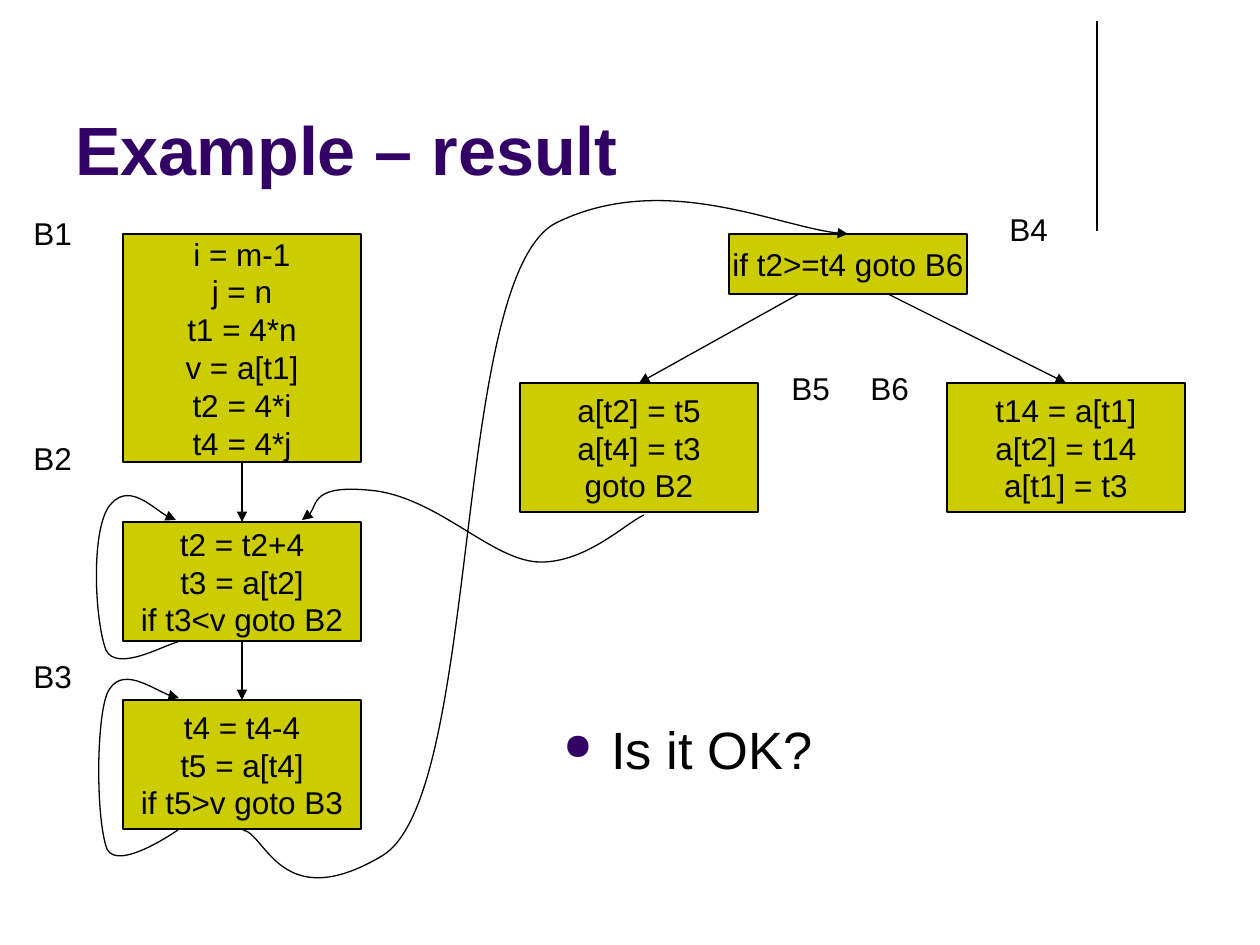
"""Builds the slide "Example – result", a flow graph of basic blocks."""
from lxml import etree
from pptx import Presentation
from pptx import util as u
from pptx.dml.color import RGBColor
from pptx.enum import shapes, text
from pptx.oxml.ns import qn

SCALE = 914400 / 126
COLORS = {"ink": "000000", "title": "330066", "block": "CCCC00"}
FONT = "Arial"
TOP, BOTTOM = 0, 2
BLOCK_WIDTH = 238

BLOCKS = {
    "B1": (123, 234, 228, ["i = m-1", "j = n", "t1 = 4*n", "v = a[t1]", "t2 = 4*i", "t4 = 4*j"]),
    "B2": (123, 522, 119, ["t2 = t2+4", "t3 = a[t2]", "if t3<v goto B2"]),
    "B3": (123, 700, 129, ["t4 = t4-4", "t5 = a[t4]", "if t5>v goto B3"]),
    "B4": (729, 234, 60, ["if t2>=t4 goto B6"]),
    "B5": (520, 383, 129, ["a[t2] = t5", "a[t4] = t3", "goto B2"]),
    "B6": (947, 383, 129, ["t14 = a[t1]", "a[t2] = t14", "a[t1] = t3"]),
}
LABELS = {"B1": (21, 208), "B4": (997, 204), "B5": (779, 363),
          "B6": (858, 363), "B2": (21, 433), "B3": (21, 651)}
BRANCHES = {"B5": (799, 294), "B6": (888, 294)}
B5_TO_B2 = [(644, 515), (626, 523), (587, 562), (541, 562), (494, 562),
            (442, 501), (377, 491), (311, 483), (318, 515), (302, 520)]
B2_LOOP = [(178, 642), (166, 644), (117, 673), (106, 650), (95, 620),
           (91, 536), (108, 508), (127, 480), (163, 518), (176, 520)]
B3_LOOP = [(178, 830), (178, 830), (118, 872), (107, 849), (96, 819),
           (96, 723), (107, 694), (120, 664), (164, 697), (179, 698)]
B3_TO_B4 = [(243, 830), (266, 834), (281, 916), (382, 856), (483, 796),
            (450, 272), (558, 222), (665, 171), (788, 232), (848, 234)]


def px(*values):
    return [u.Emu(round(value * SCALE)) for value in values]


def rgb(name):
    return RGBColor.from_string(COLORS[name])


class FlowSlide:
    def __init__(self, slide):
        self.shapes = slide.shapes

    def outline(self, shape, arrow=False):
        shape.line.color.rgb = rgb("ink")
        shape.line.width = u.Pt(0.75)
        if arrow:
            stroke = shape._element.spPr.find(qn("a:ln"))
            etree.SubElement(stroke, qn("a:tailEnd"), type="triangle")

    def set_lines(self, frame, lines, size=18, color="ink", bold=False, align=None):
        for index, line in enumerate(lines):
            para = frame.add_paragraph() if index else frame.paragraphs[0]
            para.text = line
            para.alignment = align
            para.font.name, para.font.size, para.font.bold = FONT, u.Pt(size), bold
            para.font.color.rgb = rgb(color)

    def block(self, left, top, height, lines):
        box = self.shapes.add_shape(shapes.MSO_SHAPE.RECTANGLE,
                                    *px(left, top, BLOCK_WIDTH, height))
        box.shadow.inherit = False
        box.fill.solid()
        box.fill.fore_color.rgb = rgb("block")
        self.outline(box)
        frame = box.text_frame
        frame.word_wrap = False
        frame.vertical_anchor = text.MSO_ANCHOR.MIDDLE
        self.set_lines(frame, lines, align=text.PP_ALIGN.CENTER)
        return box

    def label(self, left, top, words):
        frame = self.shapes.add_textbox(*px(left, top, 64, 50)).text_frame
        frame.word_wrap = False
        frame.auto_size = text.MSO_AUTO_SIZE.SHAPE_TO_FIT_TEXT
        self.set_lines(frame, [words])

    def title(self, words):
        frame = self.shapes.add_textbox(*px(63, 16, 1040, 179)).text_frame
        frame.word_wrap = True
        frame.vertical_anchor = text.MSO_ANCHOR.BOTTOM
        self.set_lines(frame, [words], 39, "title", True)

    def bullet(self, words):
        frame = self.shapes.add_textbox(*px(551, 711, 646, 99)).text_frame
        frame.word_wrap = True
        props = frame.paragraphs[0]._p.get_or_add_pPr()
        props.set("marL", str(u.Inches(0.38)))
        props.set("indent", str(u.Inches(-0.38)))
        color = etree.SubElement(props, qn("a:buClr"))
        etree.SubElement(color, qn("a:srgbClr"), val=COLORS["title"])
        etree.SubElement(props, qn("a:buSzPct"), val="70000")
        etree.SubElement(props, qn("a:buChar"), char="●")
        self.set_lines(frame, [words], 30)

    def line(self, start, end, arrow=True):
        connector = self.shapes.add_connector(shapes.MSO_CONNECTOR.STRAIGHT, *px(*start, *end))
        self.outline(connector, arrow)
        etree.SubElement(connector._element.spPr, qn("a:effectLst"))
        return connector

    def curve(self, points):
        builder = self.shapes.build_freeform(*points[0], scale=SCALE)
        builder.add_line_segments(points[1:], close=False)
        shape = builder.convert_to_shape()
        shape.shadow.inherit = False
        shape.fill.background()
        self.outline(shape, arrow=True)
        steps = list(shape._element.iter(qn("a:lnTo")))
        for first in range(0, len(steps), 3):
            segment = etree.Element(qn("a:cubicBezTo"))
            steps[first].addprevious(segment)
            for step in steps[first:first + 3]:
                segment.append(step[0])
                step.getparent().remove(step)


def main():
    deck = Presentation()
    deck.slide_width, deck.slide_height = u.Inches(10), u.Inches(7.5)
    page = FlowSlide(deck.slides.add_slide(deck.slide_layouts[6]))

    page.line((1097, 21), (1097, 231), arrow=False)
    page.title("Example – result")
    boxes = {name: page.block(*block) for name, block in BLOCKS.items()}
    for name, start in BRANCHES.items():
        left, top = BLOCKS[name][:2]
        branch = page.line(start, (left + BLOCK_WIDTH / 2, top))
        branch.end_connect(boxes[name], TOP)
    for source, target in (("B1", "B2"), ("B2", "B3")):
        flow = page.line((0, 0), (0, 0))
        flow.begin_connect(boxes[source], BOTTOM)
        flow.end_connect(boxes[target], TOP)
    for points in (B5_TO_B2, B2_LOOP, B3_LOOP):
        page.curve(points)
    for name, place in LABELS.items():
        page.label(*place, name)
    page.curve(B3_TO_B4)
    page.bullet("Is it OK?")
    deck.save("out.pptx")


if __name__ == "__main__":
    main()
